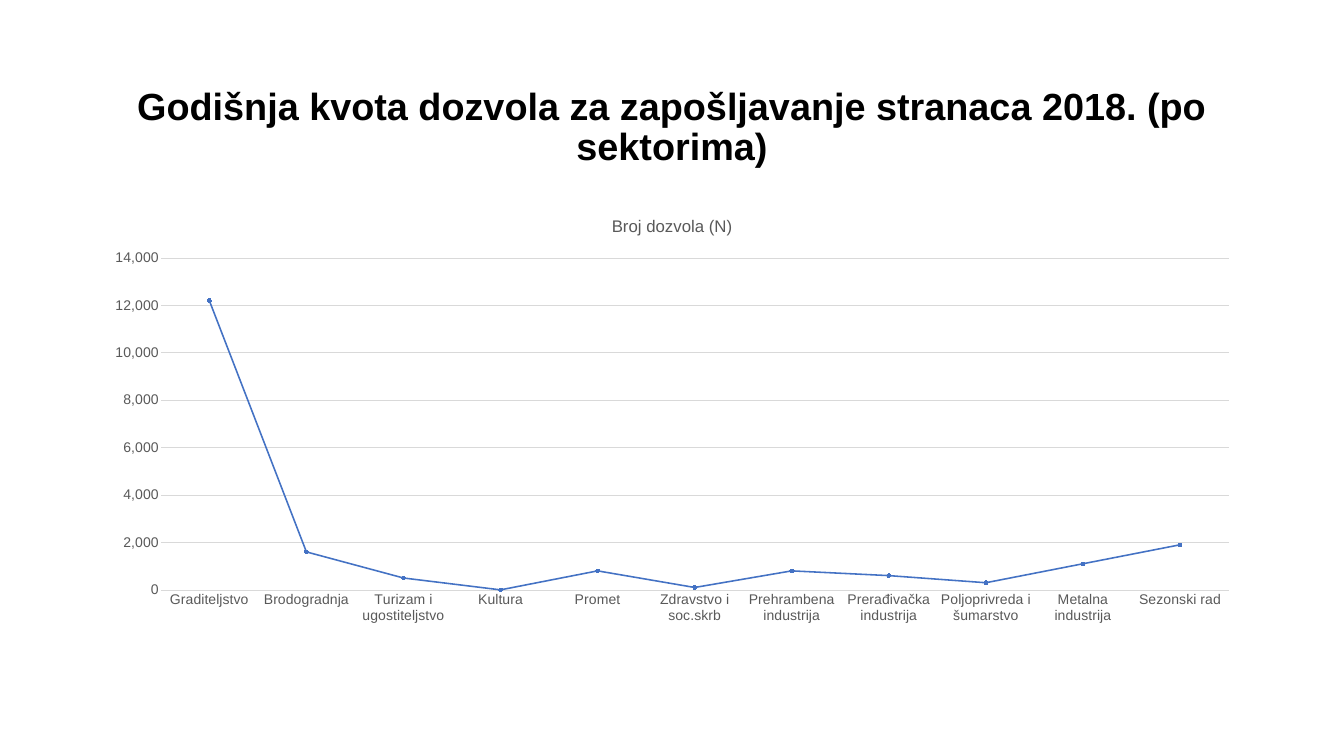
"""Build a slide charting the 2018 work permit quota by sector."""
import pptx
import pptx.chart.data
import pptx.dml.color
import pptx.enum.chart
import pptx.enum.text
import pptx.util

Pt = pptx.util.Pt
BLACK = pptx.dml.color.RGBColor(0x00, 0x00, 0x00)
GRAY = pptx.dml.color.RGBColor(0x59, 0x59, 0x59)
GRID = pptx.dml.color.RGBColor(0xD9, 0xD9, 0xD9)
BLUE = pptx.dml.color.RGBColor(0x44, 0x72, 0xC4)

LEFT = 131.76
WIDTH = 1656
PERMITS = {
    "Graditeljstvo": 12200,
    "Brodogradnja": 1600,
    "Turizam i ugostiteljstvo": 500,
    "Kultura": 0,
    "Promet": 800,
    "Zdravstvo i soc.skrb": 100,
    "Prehrambena industrija": 800,
    "Prerađivačka industrija": 600,
    "Poljoprivreda i šumarstvo": 300,
    "Metalna industrija": 1100,
    "Sezonski rad": 1900,
}


def style_font(font, size, color, bold=False):
    font.name = "Arial"
    font.size = Pt(size)
    font.bold = bold
    font.color.rgb = color


def write_text(text_frame, text, size=20, color=BLACK, bold=False, line_spacing=None):
    paragraph = text_frame.paragraphs[0]
    paragraph.alignment = pptx.enum.text.PP_ALIGN.CENTER
    paragraph.line_spacing = line_spacing
    run = paragraph.add_run()
    run.text = text
    style_font(run.font, size, color, bold)


def style_line(line, color, width):
    line.color.rgb = color
    line.width = Pt(width)


class SlideBuilder:
    def __init__(self, presentation):
        self.slide = presentation.slides.add_slide(presentation.slide_layouts[5])
        self.text_color = GRAY
        self.label_size = 20

    def add_title(self, text, left, top, width, height):
        title = self.slide.shapes.title
        title.left, title.top = Pt(left), Pt(top)
        title.width, title.height = Pt(width), Pt(height)
        text_frame = title.text_frame
        text_frame.word_wrap = True
        text_frame.auto_size = pptx.enum.text.MSO_AUTO_SIZE.NONE
        text_frame.vertical_anchor = pptx.enum.text.MSO_ANCHOR.MIDDLE
        write_text(text_frame, text, size=54, bold=True, line_spacing=0.9)

    def add_line_chart(self, name, values, left, top, width, height):
        chart_data = pptx.chart.data.CategoryChartData(number_format="#,##0")
        chart_data.categories = list(values)
        chart_data.add_series(name, list(values.values()))
        chart = self.slide.shapes.add_chart(
            pptx.enum.chart.XL_CHART_TYPE.LINE_MARKERS_STACKED,
            Pt(left), Pt(top), Pt(width), Pt(height), chart_data,
        ).chart
        style_font(chart.font, self.label_size, BLACK)
        chart.has_legend = False
        chart.has_title = True
        write_text(chart.chart_title.text_frame, name, size=24, color=self.text_color)
        chart.chart_title.include_in_layout = False
        chart.plots[0].vary_by_categories = False
        self.style_axes(chart)
        self.style_series(chart.plots[0].series[0])

    def style_axes(self, chart):
        for axis in (chart.category_axis, chart.value_axis):
            axis.major_tick_mark = pptx.enum.chart.XL_TICK_MARK.NONE
            axis.minor_tick_mark = pptx.enum.chart.XL_TICK_MARK.NONE
            style_font(axis.tick_labels.font, self.label_size, self.text_color)
        style_line(chart.category_axis.format.line, GRID, 0.75)
        value_axis = chart.value_axis
        value_axis.minimum_scale = 0
        value_axis.maximum_scale = 14000
        value_axis.major_unit = 2000
        value_axis.format.line.fill.background()
        value_axis.has_major_gridlines = True
        style_line(value_axis.major_gridlines.format.line, GRID, 0.75)
        value_axis.tick_labels.number_format = "#,##0"
        value_axis.tick_labels.number_format_is_linked = False

    def style_series(self, series):
        series.smooth = False
        style_line(series.format.line, BLUE, 2.25)
        marker = series.marker
        marker.style = pptx.enum.chart.XL_MARKER_STYLE.CIRCLE
        marker.size = 5
        marker.format.fill.solid()
        marker.format.fill.fore_color.rgb = BLUE
        style_line(marker.format.line, BLUE, 0.75)


def main():
    presentation = pptx.Presentation()
    presentation.slide_width = Pt(1919.52)
    presentation.slide_height = Pt(1080)
    builder = SlideBuilder(presentation)
    builder.add_title(
        "Godišnja kvota dozvola za zapošljavanje stranaca 2018. (po sektorima)",
        LEFT, 100.08, WIDTH, 166.32,
    )
    builder.add_line_chart("Broj dozvola (N)", PERMITS, LEFT, 287.28, WIDTH, 615.6)
    presentation.save("out.pptx")


if __name__ == "__main__":
    main()
